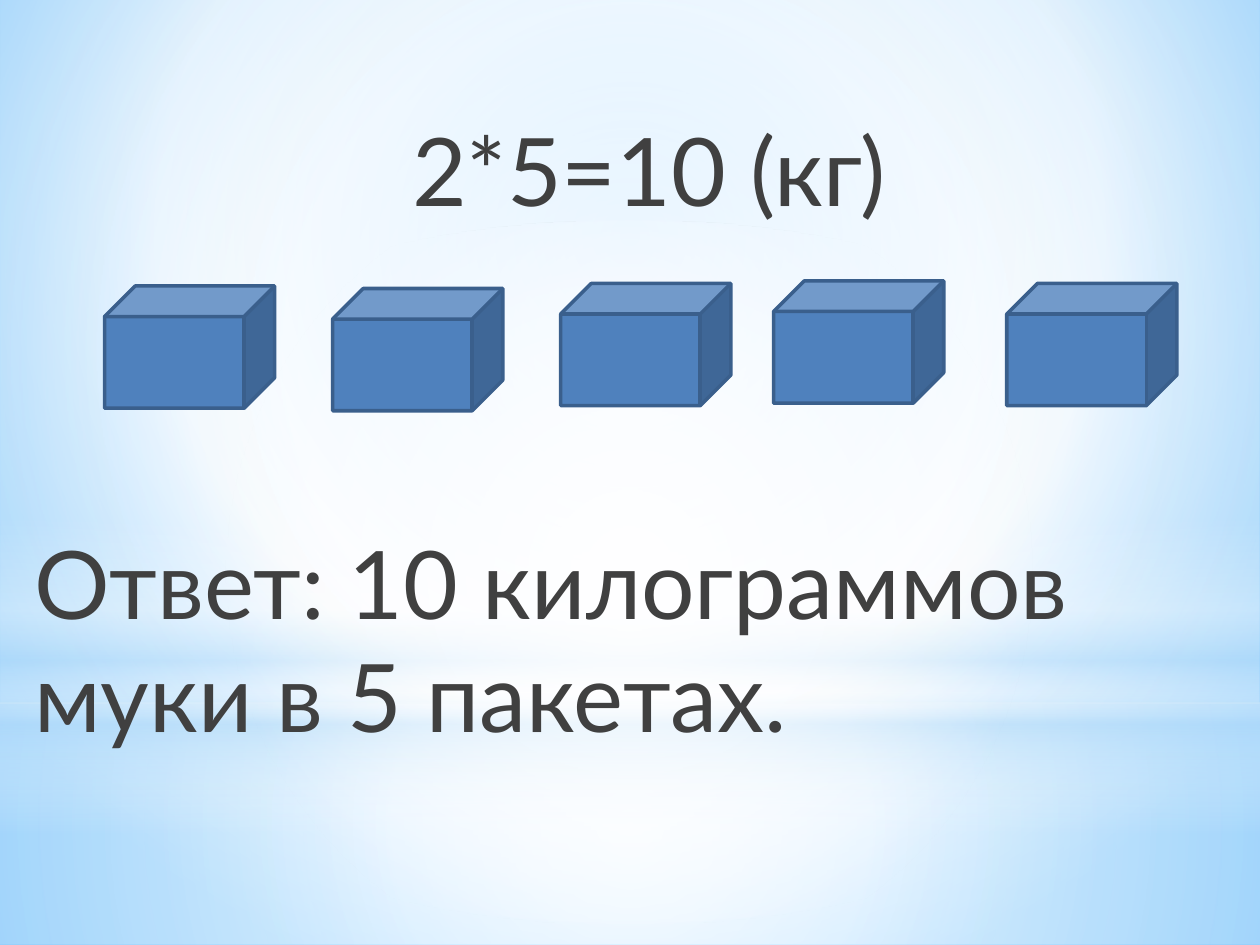
"""Builds the flour problem slide: five packets, the sum and the answer."""
from lxml import etree
from pptx import Presentation, util as u
from pptx.dml.color import RGBColor
from pptx.enum import shapes, text
from pptx.oxml.ns import qn

COLORS = {"sky": "9ED5FF", "deep": "5BB9FF", "mist": "B4DCFA", "white": "FFFFFF",
          "packet": "4F81BD", "edge": "3A5F8C", "ink": "404040"}
CENTER = (50, 50, 50, 50)


def set_gradient(fill, owner, stops, focus):
    """Give a fill its (position, color, opacity) stops, round if it has a focus."""
    fill.gradient()
    grad = next(owner.iter(qn("a:gradFill")))
    for child in list(grad):
        grad.remove(child)
    stop_list = etree.SubElement(grad, qn("a:gsLst"))
    for position, color, opacity in stops:
        stop = etree.SubElement(stop_list, qn("a:gs"), pos=str(position * 1000))
        tint = etree.SubElement(stop, qn("a:srgbClr"), val=COLORS[color])
        if opacity < 100:
            etree.SubElement(tint, qn("a:alpha"), val=str(opacity * 1000))
    if focus:
        circle = etree.SubElement(grad, qn("a:path"), path="circle")
        sides = {side: str(share * 1000) for side, share in zip("ltrb", focus)}
        etree.SubElement(circle, qn("a:fillToRect"), **sides)
    else:
        etree.SubElement(grad, qn("a:lin"), ang="5400000", scaled="0")


prs = Presentation()
prs.slide_width, prs.slide_height = u.Inches(10), u.Inches(7.5)
slide = prs.slides.add_slide(prs.slide_layouts[1])
title, solution = slide.placeholders
title.element.getparent().remove(title.element)

set_gradient(slide.background.fill, slide.element,
             [(0, "sky", 100), (60, "white", 100), (100, "deep", 100)], (20, 10, 20, 60))

RECT, OVAL = shapes.MSO_SHAPE.RECTANGLE, shapes.MSO_SHAPE.OVAL
glows = [
    (RECT, 5.58, 1.92, [(0, "white", 91), (37, "white", 76), (100, "mist", 79)], CENTER),
    (RECT, 0, 5.58, [(0, "white", 89), (48, "white", 62), (100, "mist", 79)], CENTER),
    (RECT, 4.12, 2.5, [(0, "white", 0), (29, "white", 30), (45, "mist", 40),
                       (55, "white", 26), (65, "mist", 60), (100, "white", 0)], None),
    (OVAL, 1.75, 5.58, [(0, "white", 100), (56, "white", 0)], CENTER),
]
for outline, top, height, stops, focus in glows:
    glow = slide.shapes.add_shape(outline, 0, u.Inches(top), prs.slide_width, u.Inches(height))
    glow.shadow.inherit = False
    glow.line.fill.background()
    set_gradient(glow.fill, glow.element, stops, focus)

solution.element.getparent().append(solution.element)
solution.left, solution.top = u.Inches(0.12), u.Inches(0.84)
solution.width, solution.height = u.Inches(9.37), u.Inches(6.02)
frame = solution.text_frame
frame.word_wrap = True
frame.auto_size = text.MSO_AUTO_SIZE.NONE
frame.vertical_anchor = text.MSO_ANCHOR.TOP
frame.text = "2*5=10 (кг)\nОтвет: 10 килограммов муки в 5 пакетах."
for paragraph, indent, gap in zip(frame.paragraphs, (3.05, 0.05), (0, 168)):
    paragraph.font.name, paragraph.font.size = "Lato", u.Pt(54)
    paragraph.font.color.rgb = RGBColor.from_string(COLORS["ink"])
    paragraph.alignment = text.PP_ALIGN.LEFT
    paragraph.space_before, paragraph.space_after = u.Pt(gap), u.Pt(3)
    properties = paragraph._p.get_or_add_pPr()
    properties.set("marL", str(u.Inches(indent)))
    properties.set("indent", "0")
    etree.SubElement(properties, qn("a:buNone"))
    properties.append(properties.find(qn("a:defRPr")))

for left, top in [(0.83, 2.27), (2.64, 2.29), (4.45, 2.25), (6.14, 2.23), (7.99, 2.25)]:
    packet = slide.shapes.add_shape(shapes.MSO_SHAPE.CUBE, u.Inches(left), u.Inches(top),
                                    u.Inches(1.35), u.Inches(0.97))
    packet.shadow.inherit = False
    packet.fill.solid()
    packet.fill.fore_color.rgb = RGBColor.from_string(COLORS["packet"])
    packet.line.color.rgb = RGBColor.from_string(COLORS["edge"])
    packet.line.width = u.Pt(2)

prs.save("out.pptx")
